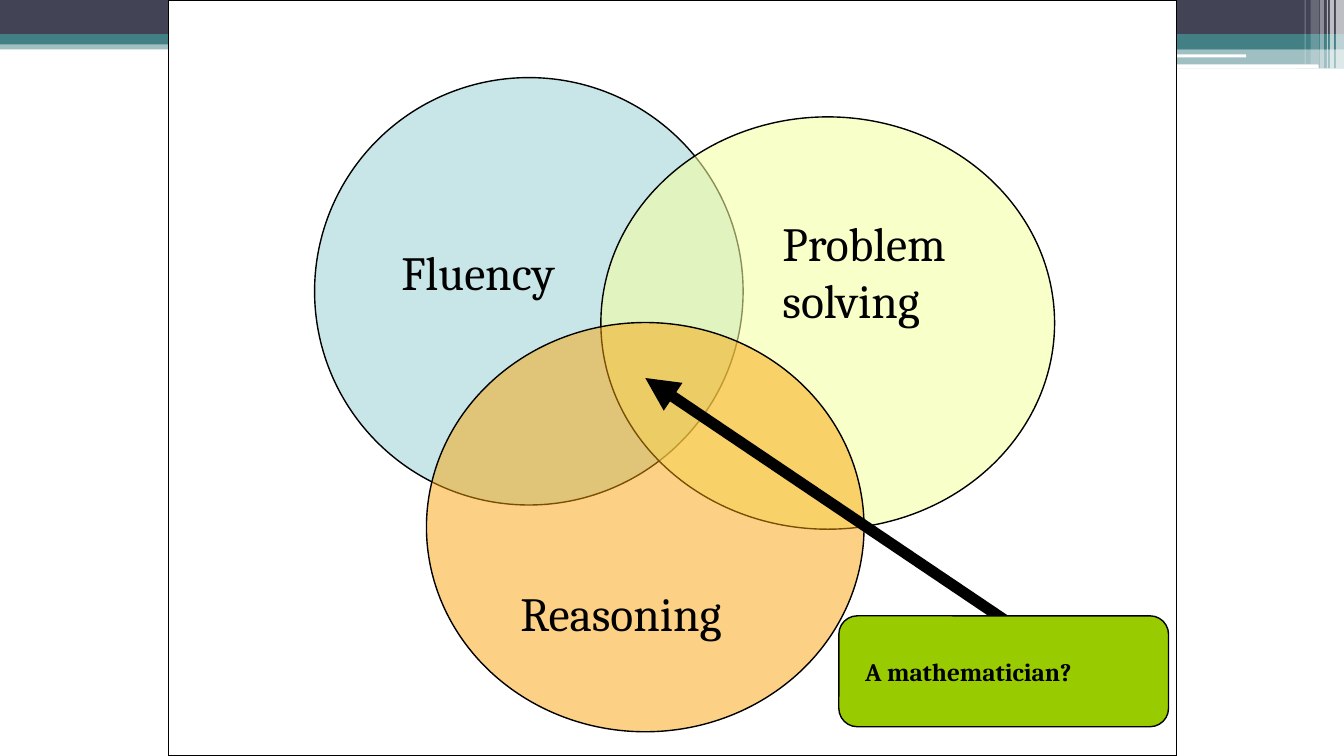
from typing import NamedTuple

from lxml.etree import SubElement
from pptx import Presentation
from pptx.dml.color import RGBColor
from pptx.enum.shapes import MSO_CONNECTOR, MSO_SHAPE as SHAPE
from pptx.enum.text import MSO_ANCHOR
from pptx.oxml.ns import qn
from pptx.util import Inches, Pt

WIDTH, HEIGHT = 13.33, 7.5
INK, WHITE, NAVY, TEAL = "000000", "FFFFFF", "424456", "438086"
FONT = "Cambria"
INSET = 0.07


class Box(NamedTuple):
    """A rectangle measured on a grid of one-inch columns and rows."""
    left: float
    top: float
    width: float
    height: float

    def inner(self, left, top, width, height):
        """Return a rectangle placed from this one's top left corner."""
        return Box(self.left + left, self.top + top, width, height)

    def lengths(self):
        """Return the four lengths for a shape."""
        return [Inches(value) for value in self]


def color(value):
    """Turn a hex string into a colour."""
    return RGBColor.from_string(value)


def add_filled(slide, kind, box, fill, opacity=100, outline=None):
    """Draw a preset shape with a flat fill and an optional thin outline."""
    shape = slide.shapes.add_shape(kind, *box.lengths())
    shape.shadow.inherit = False
    shape.fill.solid()
    shape.fill.fore_color.rgb = color(fill)
    if opacity < 100:
        tint = shape._element.spPr.find(qn("a:solidFill"))[0]
        SubElement(tint, qn("a:alpha"), val=str(opacity * 1000))
    if outline:
        shape.line.color.rgb = color(outline)
        shape.line.width = Pt(1)
    else:
        shape.line.fill.background()


def add_label(slide, box, text, size, bold=False, wrap=True):
    """Write black text centred vertically in a box."""
    frame = slide.shapes.add_textbox(*box.lengths()).text_frame
    frame.word_wrap = wrap
    frame.vertical_anchor = MSO_ANCHOR.MIDDLE
    frame.margin_left = frame.margin_right = Inches(INSET)
    frame.margin_top = frame.margin_bottom = Inches(INSET)
    frame.text = text
    font = frame.paragraphs[0].runs[0].font
    font.name, font.size, font.bold = FONT, Pt(size), bold
    font.color.rgb = color(INK)


def add_header(slide, box):
    """Draw the layered bands and the pale stripes at the right end."""
    right = box.inner(7.89, 0, box.width - 7.89, box.height)
    bands = [
        (box, 0.4, 0.09, TEAL, 50),
        (box, 0, 0.34, NAVY, 100),
        (box, 0.34, 0.1, TEAL, 100),
        (right, 0.39, 0.1, TEAL, 100),
        (right, 0.48, 0.2, TEAL, 50),
    ]
    for area, top, height, fill, opacity in bands:
        band = area.inner(0, top, area.width, height)
        add_filled(slide, SHAPE.RECTANGLE, band, fill, opacity)
    for left, top, width, height in [(0, 0.54, 4.47, 0.03), (2.86, 0.64, 2.33, 0.04)]:
        add_filled(slide, SHAPE.ROUNDED_RECTANGLE, right.inner(left, top, width, height), WHITE)
    stripes = [
        (0.08, 0.08, 0.68, 65),
        (0.14, 0.04, 0.68, 65),
        (0.17, 0.01, 0.68, 60),
        (0.24, 0.04, 0.68, 40),
        (0.33, 0.08, 0.64, 20),
        (0.39, 0.01, 0.64, 30),
    ]
    for from_right, width, height, opacity in stripes:
        stripe = box.inner(box.width - from_right, 0, width, height)
        add_filled(slide, SHAPE.RECTANGLE, stripe, WHITE, opacity)


def add_venn(slide, box):
    """Draw three overlapping circles, each with its label."""
    circles = [
        ("Fluency", box.inner(1.45, 0.77, 4.25, 4.24), "BBE0E3", 80,
         (0.79, 1.56, 1.81, 0.72), False),
        ("Problem solving", box.inner(4.29, 1.16, 4.5, 4.09), "F6FF9F", 56,
         (1.73, 0.88, 2.91, 1.29), True),
        ("Reasoning", box.inner(2.56, 3.2, 4.34, 4.06), "F9A307", 49,
         (0.86, 2.52, 2.42, 0.72), False),
    ]
    for text, circle, fill, opacity, label, wrap in circles:
        add_filled(slide, SHAPE.OVAL, circle, fill, opacity, INK)
        add_label(slide, circle.inner(*label), text, 34, wrap=wrap)


def add_callout(slide, box, target):
    """Draw the green callout and its thick arrow to the target point."""
    start = box.inner(1.82, 0.16, 0, 0)
    ends = [Inches(value) for value in (start.left, start.top, *target)]
    arrow = slide.shapes.add_connector(MSO_CONNECTOR.STRAIGHT, *ends)
    arrow.line.color.rgb = color(INK)
    arrow.line.width = Pt(8)
    properties = arrow._element.spPr
    SubElement(properties.find(qn("a:ln")), qn("a:tailEnd"), type="triangle")
    SubElement(properties, qn("a:effectLst"))
    add_filled(slide, SHAPE.ROUNDED_RECTANGLE, box, "99CC00", outline=INK)
    add_label(slide, box.inner(0.19, 0.33, 3.05, 0.45), "A mathematician?", 18, bold=True)


def main():
    """Build the slide and save it."""
    presentation = Presentation()
    presentation.slide_width = Inches(WIDTH)
    presentation.slide_height = Inches(HEIGHT)
    slide = presentation.slides.add_slide(presentation.slide_layouts[6])
    panel = Box(1.67, 0, 10, HEIGHT)
    add_header(slide, Box(0, 0, WIDTH, 0.68))
    add_filled(slide, SHAPE.RECTANGLE, panel, WHITE, outline=INK)
    add_venn(slide, panel)
    add_callout(slide, panel.inner(6.65, 6.11, 3.27, 1.1), (6.4, 3.75))
    presentation.save("out.pptx")


if __name__ == "__main__":
    main()
